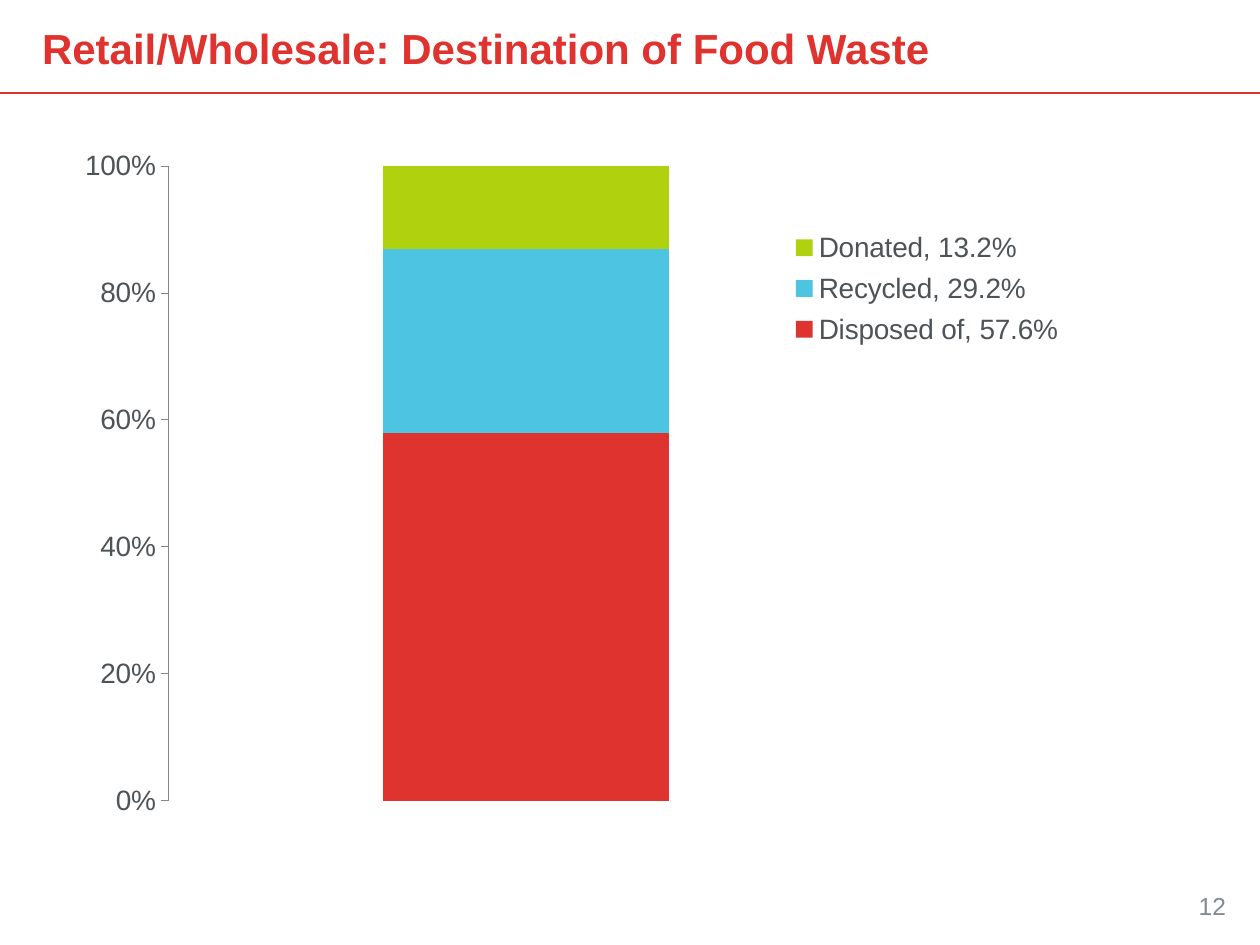
from lxml import etree
from pptx import Presentation
from pptx.chart.data import CategoryChartData
from pptx.dml.color import RGBColor
from pptx.enum.chart import XL_CHART_TYPE as ChartType, XL_LEGEND_POSITION as LegendSide
from pptx.enum.chart import XL_TICK_MARK as TickMark
from pptx.enum.shapes import MSO_CONNECTOR as Connector
from pptx.enum.text import MSO_ANCHOR as Anchor, MSO_AUTO_SIZE as AutoSize, PP_ALIGN as Align
from pptx.oxml import parse_xml
from pptx.oxml.ns import nsdecls, qn
from pptx.util import Pt

PX = 914400 / 126
RED, GREY = "DF332F", "4D5357"
CHART_WIDTH, CHART_HEIGHT = 1134, 693
SERIES = [
    ("Disposed of, 57.6%", 58, RED),
    ("Recycled, 29.2%", 29, "4DC5E2"),
    ("Donated, 13.2%", 13, "B0D20E"),
]


def px(*lengths):
    return [round(length * PX) for length in lengths]


def style_text(box, text, size, color, align, bold=False):
    frame = box.text_frame
    frame.word_wrap = True
    frame.auto_size = AutoSize.NONE
    frame.margin_left = frame.margin_right = frame.margin_top = frame.margin_bottom = 0
    frame.text = text
    para = frame.paragraphs[0]
    para.alignment = align
    para.font.name, para.font.size, para.font.bold = "Arial", Pt(size), bold
    para.font.color.rgb = RGBColor.from_string(color)


deck = Presentation()
deck.slide_width, deck.slide_height = px(1260, 945)
page = deck.slides.add_slide(deck.slide_layouts[5])

# Title with its rule
title = page.shapes.title
title.left, title.top, title.width, title.height = px(42, 0, 1173, 95)
style_text(title, "Retail/Wholesale: Destination of Food Waste", 24, RED, Align.LEFT, True)
title.text_frame.vertical_anchor = Anchor.MIDDLE

rule = page.shapes.add_connector(Connector.STRAIGHT, *px(0, 93, 1260, 93))
rule.line.color.rgb = RGBColor.from_string(RED)
rule.line.width = Pt(1.5)
etree.SubElement(rule._element.spPr, qn("a:effectLst"))

# Stacked column
data = CategoryChartData(number_format="0")
data.categories = ["1"]
for name, share, color in SERIES:
    data.add_series(name, [share])
chart = page.shapes.add_chart(
    ChartType.COLUMN_STACKED_100, *px(63, 136, CHART_WIDTH, CHART_HEIGHT), data).chart
chart.has_title = False
chart.font.name, chart.font.size = "Arial", Pt(16)
chart.font.color.rgb = RGBColor.from_string(GREY)

plot = chart.plots[0]
plot.gap_width, plot.overlap = 150, 100
plot.vary_by_categories = False
for series, (name, share, color) in zip(plot.series, SERIES):
    series.format.fill.solid()
    series.format.fill.fore_color.rgb = RGBColor.from_string(color)

chart.category_axis.visible = False
axis = chart.value_axis
axis.has_major_gridlines = False
axis.minimum_scale, axis.maximum_scale, axis.major_unit = 0, 1, 0.2
axis.major_tick_mark, axis.minor_tick_mark = TickMark.OUTSIDE, TickMark.NONE
axis.tick_labels.number_format = "0%"
axis.tick_labels.number_format_is_linked = False
axis.format.line.color.rgb = RGBColor.from_string("868686")
axis.format.line.width = Pt(0.5)

chart.has_legend = True
legend = chart.legend
legend.position = LegendSide.RIGHT
legend.include_in_layout = False

# Fixed places for plot and legend, in px inside the chart
plot_area = chart._chartSpace.chart.plotArea
for old in plot_area.findall(qn("c:layout")) + legend._element.findall(qn("c:layout")):
    old.getparent().remove(old)
for parent, index, target, place in [
    (plot_area, 0, '<c:layoutTarget val="inner"/>', (105, 30, 716, 635)),
    (legend._element, 1, "", (722, 86, 284, 133)),
]:
    modes = '<c:xMode val="edge"/><c:yMode val="edge"/>'
    sides = (CHART_WIDTH, CHART_HEIGHT) * 2
    sizes = "".join(f'<c:{key} val="{length / side}"/>'
                    for key, length, side in zip("xywh", place, sides))
    parent.insert(index, parse_xml(
        f'<c:layout {nsdecls("c")}><c:manualLayout>{target}{modes}{sizes}'
        "</c:manualLayout></c:layout>"))

# Page number
number = page.shapes.add_textbox(*px(932, 891, 294, 42))
style_text(number, "12", 14, "828A8F", Align.RIGHT)

deck.save("out.pptx")
